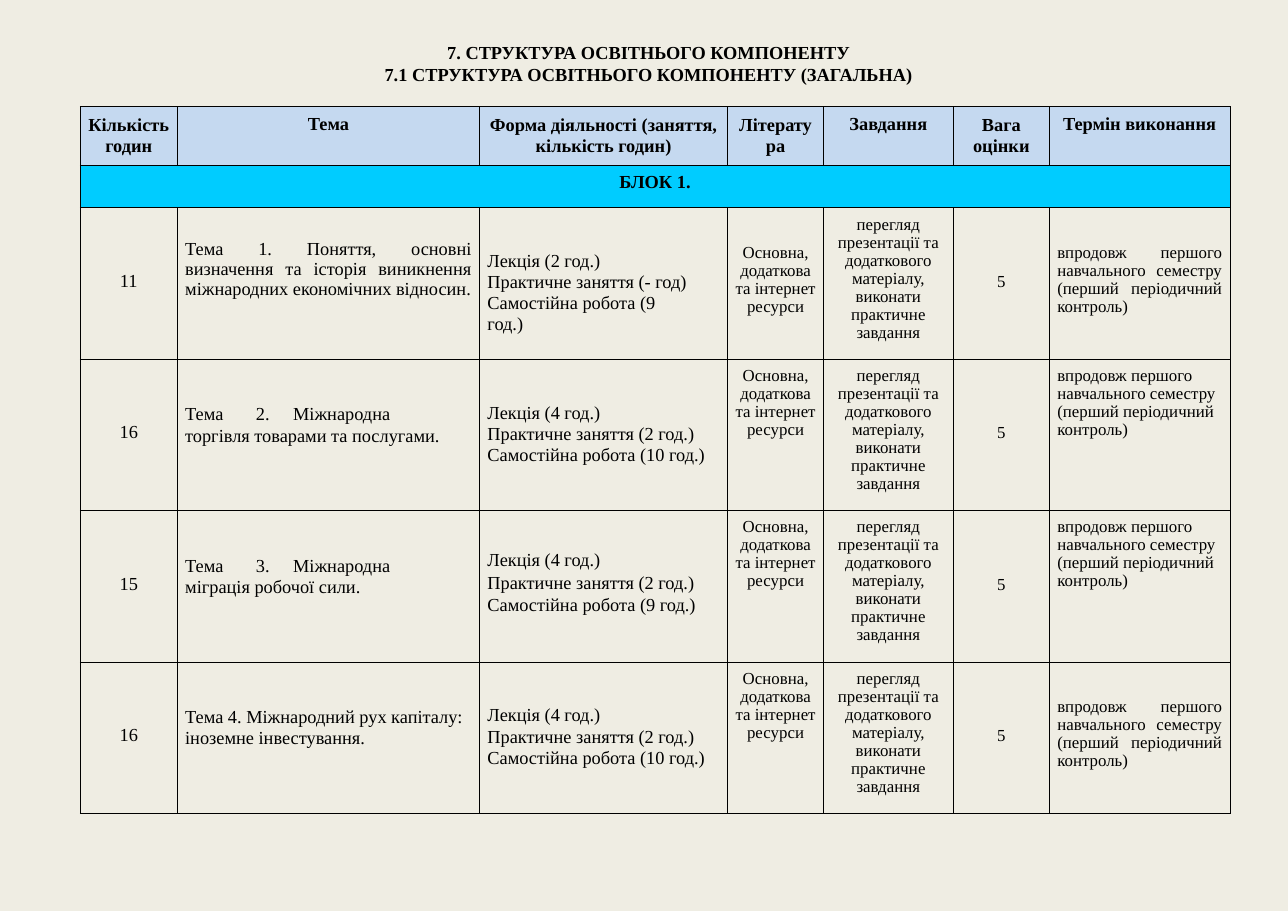
from dataclasses import dataclass

from lxml import etree
from pptx import Presentation
from pptx.dml.color import RGBColor
from pptx.enum.text import MSO_ANCHOR, PP_ALIGN as Align
from pptx.oxml.ns import qn
from pptx.util import Cm, Pt

BLACK, PAPER, HEAD_BLUE, BLOCK_BLUE = "000000", "EFEDE3", "C5D9F0", "00CCFF"
COLUMN_WIDTHS = (2.24, 6.97, 5.72, 2.21, 2.99, 2.22, 4.16)
HEAD_HEIGHT, BLOCK_HEIGHT, TOPIC_HEIGHT = 1.36, 0.97, 3.49
TOPIC_TABS = (1.63, 2.49, 5.31)
HIGH, LOW = 0.18, 0.83
LITERATURE = "Основна, додаткова та інтернет ресурси"
TASK = "перегляд презентації та додаткового матеріалу, виконати практичне завдання"
DEADLINE = "впродовж першого навчального семестру (перший періодичний контроль)"


@dataclass
class Heading:
    text: str
    top: float


@dataclass
class Topic:
    hours: str
    title: str
    title_top: float
    title_align: Align
    title_spacing: object
    activities: tuple
    activities_top: float
    activities_spacing: float
    literature_top: float
    deadline_top: float
    deadline_align: Align


HEADINGS = (
    Heading("Кількість годин", 0.18),
    Heading("Тема", 0.15),
    Heading("Форма діяльності (заняття, кількість годин)", 0.18),
    Heading("Літерату ра", 0.18),
    Heading("Завдання", 0.15),
    Heading("Вага оцінки", 0.18),
    Heading("Термін виконання", 0.15),
)

TOPICS = (
    Topic("11", "Тема 1. Поняття, основні визначення та історія виникнення "
          "міжнародних економічних відносин.", 0.75, Align.JUSTIFY, 0.96,
          ("Лекція (2 год.)", "Практичне заняття (- год)", "Самостійна робота (9\vгод.)"),
          1.0, 13.6, LOW, LOW, Align.JUSTIFY),
    Topic("16", "Тема\t2.\tМіжнародна\tторгівля товарами та послугами.",
          1.03, Align.LEFT, Pt(13.8),
          ("Лекція (4 год.)", "Практичне заняття (2 год.)", "Самостійна робота (10 год.)"),
          0.98, 14, HIGH, HIGH, Align.LEFT),
    Topic("15", "Тема\t3.\tМіжнародна\tміграція робочої сили.",
          1.03, Align.LEFT, Pt(13.8),
          ("Лекція (4 год.)", "Практичне заняття (2 год.)", "Самостійна робота (9 год.)"),
          0.86, 14.8, HIGH, HIGH, Align.LEFT),
    Topic("16", "Тема 4. Міжнародний рух капіталу: іноземне інвестування.",
          1.03, Align.LEFT, Pt(13.8),
          ("Лекція (4 год.)", "Практичне заняття (2 год.)", "Самостійна робота (10 год.)"),
          0.98, 14, HIGH, LOW, Align.JUSTIFY),
)


def color(value: str) -> RGBColor:
    return RGBColor.from_string(value)


def write(frame, *lines: str, size: float = 12, bold: bool = False,
          align: Align = Align.CENTER, spacing=1.0, tabs: tuple = ()) -> None:
    for index, line in enumerate(lines):
        paragraph = frame.add_paragraph() if index else frame.paragraphs[0]
        paragraph.text = line
        paragraph.alignment = align
        paragraph.line_spacing = spacing
        if tabs:
            stops = etree.SubElement(paragraph._p.get_or_add_pPr(), qn("a:tabLst"))
            for position in tabs:
                etree.SubElement(stops, qn("a:tab"), pos=str(Cm(position)), algn="l")
        for run in paragraph.runs:
            run.font.name = "Times New Roman"
            run.font.size = Pt(size)
            run.font.bold = bold
            run.font.color.rgb = color(BLACK)


def draw_borders(cell) -> None:
    properties = cell._tc.get_or_add_tcPr()
    for position, side in enumerate(("a:lnL", "a:lnR", "a:lnT", "a:lnB")):
        line = etree.Element(qn(side), w=str(Pt(0.5)))
        fill = etree.SubElement(line, qn("a:solidFill"))
        etree.SubElement(fill, qn("a:srgbClr"), val=BLACK)
        properties.insert(position, line)


def fill_cell(cell, *lines: str, top: float, side: float = 0, fill: str = "", **text_format) -> None:
    cell.margin_top, cell.margin_bottom = Cm(top), Cm(0)
    cell.margin_left = cell.margin_right = Cm(side)
    cell.vertical_anchor = MSO_ANCHOR.TOP
    if fill:
        cell.fill.solid()
        cell.fill.fore_color.rgb = color(fill)
    else:
        cell.fill.background()
    write(cell.text_frame, *lines, **text_format)


def fill_topic(cells: list, topic: Topic) -> None:
    hours, title, activities, literature, task, weight, deadline = cells
    fill_cell(hours, topic.hours, top=1.46)
    fill_cell(title, topic.title, top=topic.title_top, side=0.18, align=topic.title_align,
              spacing=topic.title_spacing, tabs=TOPIC_TABS if "\t" in topic.title else ())
    fill_cell(activities, *topic.activities, top=topic.activities_top, side=0.18,
              align=Align.LEFT, spacing=Pt(topic.activities_spacing))
    fill_cell(literature, LITERATURE, top=topic.literature_top, side=0.15, size=11, spacing=0.96)
    fill_cell(task, TASK, top=HIGH, side=0.2, size=11, spacing=0.96)
    fill_cell(weight, "5", top=1.49, size=11)
    fill_cell(deadline, DEADLINE, top=topic.deadline_top, side=0.18, size=11,
              align=topic.deadline_align, spacing=0.96)


def add_title(slide) -> None:
    frame = slide.shapes.add_textbox(Cm(8.76), Cm(0.94), Cm(12.4), Cm(1.07)).text_frame
    frame.word_wrap = True
    frame.margin_left = frame.margin_right = frame.margin_bottom = Cm(0)
    frame.margin_top = Cm(0.03)
    write(frame, "7. СТРУКТУРА ОСВІТНЬОГО КОМПОНЕНТУ",
          "7.1 СТРУКТУРА ОСВІТНЬОГО КОМПОНЕНТУ (ЗАГАЛЬНА)", bold=True, spacing=Pt(14.1))


def add_structure(slide) -> None:
    heights = (HEAD_HEIGHT, BLOCK_HEIGHT) + (TOPIC_HEIGHT,) * len(TOPICS)
    structure = slide.shapes.add_table(
        len(heights), len(COLUMN_WIDTHS), Cm(1.85), Cm(2.46),
        Cm(sum(COLUMN_WIDTHS)), Cm(sum(heights))).table
    structure.first_row = structure.horz_banding = False
    for column, width in zip(structure.columns, COLUMN_WIDTHS):
        column.width = Cm(width)
    for row, height in zip(structure.rows, heights):
        row.height = Cm(height)

    head, block, *topic_rows = [list(row.cells) for row in structure.rows]
    for cell, heading in zip(head, HEADINGS):
        fill_cell(cell, heading.text, top=heading.top, fill=HEAD_BLUE, bold=True,
                  spacing=Pt(13.8))
    block[0].merge(block[-1])
    fill_cell(block[0], "БЛОК 1.", top=0.15, fill=BLOCK_BLUE, bold=True)
    for cells, topic in zip(topic_rows, TOPICS):
        fill_topic(cells, topic)
    for cell in structure.iter_cells():
        draw_borders(cell)


def main() -> None:
    deck = Presentation()
    deck.slide_width, deck.slide_height = Cm(29.7), Cm(21)
    slide = deck.slides.add_slide(deck.slide_layouts[6])
    slide.background.fill.solid()
    slide.background.fill.fore_color.rgb = color(PAPER)
    add_title(slide)
    add_structure(slide)
    deck.save("out.pptx")


if __name__ == "__main__":
    main()
